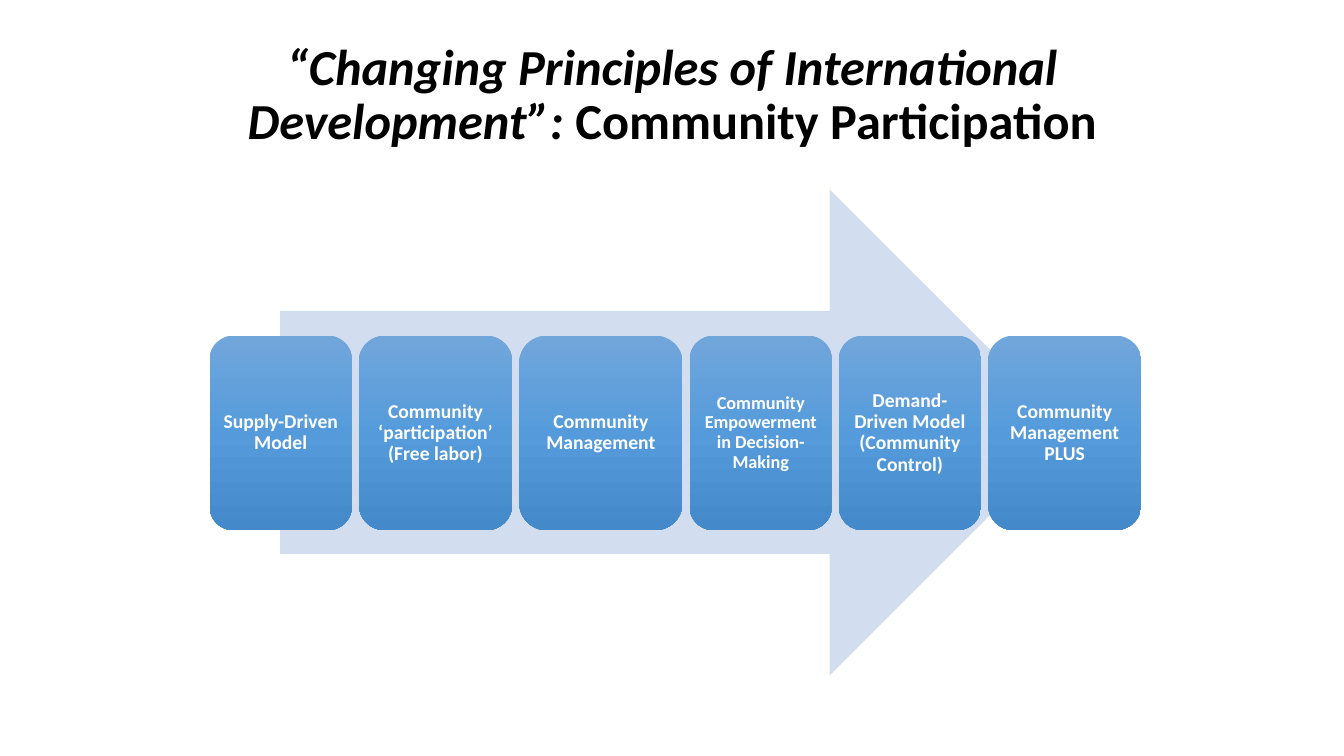
from copy import deepcopy
from dataclasses import dataclass

from pptx import Presentation
from pptx import util as u
from pptx.dml import color
from pptx.enum import shapes, text
from pptx.oxml import ns

COLORS = {
    "arrow": "D2DEEF",
    "card_top": "71A6DB",
    "card_middle": "559BDB",
    "card_bottom": "448ACA",
    "title": "000000",
    "label": "FFFFFF",
}
FONT = "Calibri"
STAGES_LEFT, STAGES_TOP, STAGE_HEIGHT, STAGE_GAP = 2.08, 3.33, 1.93, 0.07


@dataclass
class Stage:
    label: str
    width: float
    size: int = 14
    inset: float = 0.06


STAGES = [
    Stage("Supply-Driven Model", 1.41),
    Stage("Community ‘participation’ (Free labor)", 1.52),
    Stage("Community Management", 1.62),
    Stage("Community Empowerment in Decision-Making", 1.41, size=13, inset=0.05),
    Stage("Demand-Driven Model (Community Control)", 1.41),
    Stage("Community Management PLUS", 1.52),
]


def rgb(name: str) -> color.RGBColor:
    return color.RGBColor.from_string(COLORS[name])


def write(paragraph, wording: str, *, size: int, ink: str, italic: bool = False) -> None:
    paragraph.alignment = text.PP_ALIGN.CENTER
    paragraph.line_spacing = 0.9
    run = paragraph.add_run()
    run.text = wording
    run.font.name = FONT
    run.font.size = u.Pt(size)
    run.font.bold = True
    run.font.italic = italic
    run.font.color.rgb = rgb(ink)


def add_plain_shape(slide, preset, left: float, top: float, width: float, height: float):
    outline = slide.shapes.add_shape(
        preset, u.Inches(left), u.Inches(top), u.Inches(width), u.Inches(height)
    )
    outline.shadow.inherit = False
    outline.line.fill.background()
    return outline


def fill_gradient(card, names: list[str]) -> None:
    card.fill.gradient()
    card.fill.gradient_angle = 270
    stop_list = card.fill._xPr.find(ns.qn("a:gradFill")).find(ns.qn("a:gsLst"))
    while len(stop_list) < len(names):
        stop_list.append(deepcopy(stop_list[0]))
    for index, (stop, name) in enumerate(zip(card.fill.gradient_stops, names)):
        stop.position = index / (len(names) - 1)
        stop.color.rgb = rgb(name)


def add_stage(slide, stage: Stage, left: float) -> None:
    card = add_plain_shape(
        slide, shapes.MSO_SHAPE.ROUNDED_RECTANGLE, left, STAGES_TOP, stage.width, STAGE_HEIGHT
    )
    fill_gradient(card, ["card_top", "card_middle", "card_bottom"])
    frame = card.text_frame
    frame.word_wrap = True
    frame.vertical_anchor = text.MSO_ANCHOR.MIDDLE
    frame.margin_left = frame.margin_right = u.Inches(stage.inset)
    frame.margin_top = frame.margin_bottom = u.Inches(stage.inset)
    write(frame.paragraphs[0], stage.label, size=stage.size, ink="label")


def add_title(slide) -> None:
    heading = slide.shapes.add_textbox(
        u.Inches(2.17), u.Inches(0.33), u.Inches(9), u.Inches(1.25)
    )
    frame = heading.text_frame
    frame.word_wrap = True
    frame.vertical_anchor = text.MSO_ANCHOR.MIDDLE
    line = frame.paragraphs[0]
    write(line, "“Changing Principles of International Development”: ",
          size=36, ink="title", italic=True)
    write(line, "Community Participation", size=36, ink="title")


def main() -> None:
    deck = Presentation()
    deck.slide_width, deck.slide_height = u.Inches(13.33), u.Inches(7.5)
    slide = deck.slides.add_slide(deck.slide_layouts[6])

    progress = add_plain_shape(slide, shapes.MSO_SHAPE.RIGHT_ARROW, 2.78, 1.88, 7.86, 4.82)
    progress.fill.solid()
    progress.fill.fore_color.rgb = rgb("arrow")

    left = STAGES_LEFT
    for stage in STAGES:
        add_stage(slide, stage, left)
        left += stage.width + STAGE_GAP

    add_title(slide)
    deck.save("out.pptx")


if __name__ == "__main__":
    main()
